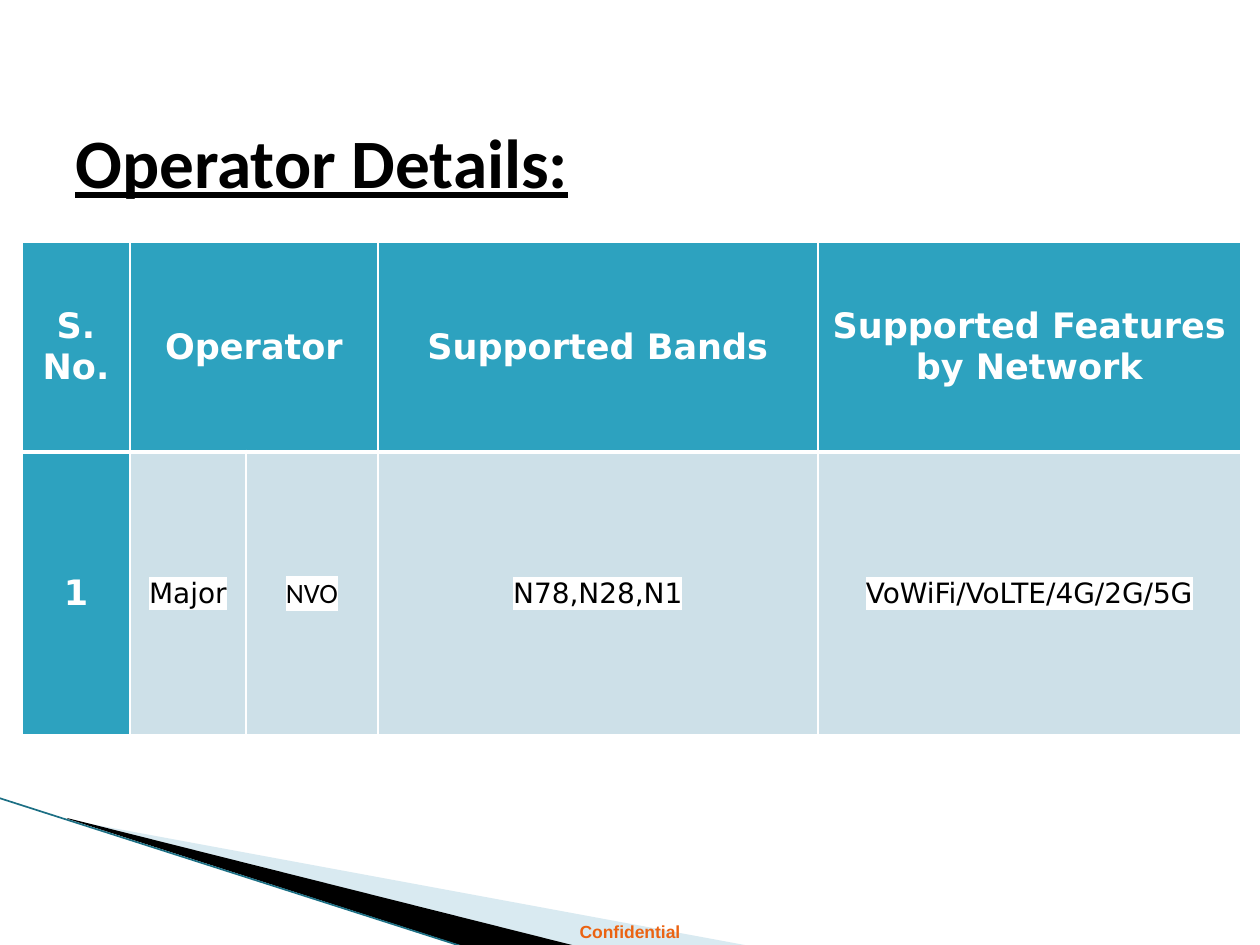
from lxml import etree
from pptx import Presentation
from pptx import util as u
from pptx.dml.color import RGBColor
from pptx.enum import shapes, text
from pptx.oxml.ns import qn

EMU_PER_PX = 914400 / 126
SLIDE = (1260, 945)
BLACK, WHITE, TEAL, PALE = "000000", "FFFFFF", "2DA2BF", "CDE0E8"

TITLE = "Operator Details:"
FOOTER = "Confidential"
HEADINGS = ["S. No.", "Operator", "", "Supported Bands", "Supported Features by Network"]
OPERATOR = ["1", "Major", "NVO", "N78,N28,N1", "VoWiFi/VoLTE/4G/2G/5G"]
NAME_COLUMN = 2
COLUMNS = [108, 116, 132, 440, 423]
ROWS = [210, 283]
TABLE_CORNER = (22, 242)

# Outline points, fill, opacity in percent
WEDGES = [
    ([(69, 820), (750, 946), (575, 946), (69, 819)], "A0CBDC", 40),
    ([(67, 818), (576, 946), (469, 948), (68, 819)], BLACK, 100),
]
EDGE = (-1, 798, 467, 948)


def px(length):
    return u.Emu(round(length * EMU_PER_PX))


def rgb(colour):
    return RGBColor.from_string(colour)


def add_run(paragraph, wording, size, face, colour, bold=False, underline=False, highlight=None):
    run = paragraph.add_run()
    run.text = wording
    font = run.font
    font.size, font.name, font.bold = u.Pt(size), face, bold
    font.color.rgb = rgb(colour)
    if underline:
        font.underline = True
    if highlight:
        mark = etree.Element(qn("a:highlight"))
        etree.SubElement(mark, qn("a:srgbClr"), val=highlight)
        run._r.rPr.find(qn("a:solidFill")).addnext(mark)


def add_text(slide, box, wording, align, anchor, *style):
    frame = slide.shapes.add_textbox(*map(px, box)).text_frame
    frame.word_wrap = True
    frame.vertical_anchor = anchor
    frame.paragraphs[0].alignment = align
    add_run(frame.paragraphs[0], wording, *style)


def add_wedge(slide, points, colour, opacity):
    builder = slide.shapes.build_freeform(*points[0], scale=EMU_PER_PX)
    builder.add_line_segments(points[1:], close=True)
    wedge = builder.convert_to_shape()
    wedge.shadow.inherit = False
    wedge.line.fill.background()
    wedge.fill.solid()
    wedge.fill.fore_color.rgb = rgb(colour)
    if opacity < 100:
        fill_colour = wedge._element.spPr.find(qn("a:solidFill"))[0]
        etree.SubElement(fill_colour, qn("a:alpha"), val=str(opacity * 1000))


def add_edge(slide):
    edge = slide.shapes.add_connector(shapes.MSO_CONNECTOR.STRAIGHT, *map(px, EDGE))
    edge.line.color.rgb = rgb("1C6F84")
    edge.line.width = u.Pt(0.95)
    etree.SubElement(edge._element.spPr, qn("a:effectLst"))


def set_borders(cell, widths):
    """Draw white borders; widths maps a side (L, R, T, B) to points."""
    properties = cell._tc.get_or_add_tcPr()
    for position, (side, width) in enumerate(widths.items()):
        border = etree.Element(qn(f"a:ln{side}"), w=str(u.Pt(width)))
        fill = etree.SubElement(border, qn("a:solidFill"))
        etree.SubElement(fill, qn("a:srgbClr"), val=WHITE)
        properties.insert(position, border)


def add_operator_table(slide):
    size = (px(sum(COLUMNS)), px(sum(ROWS)))
    table = slide.shapes.add_table(
        len(ROWS), len(COLUMNS), *map(px, TABLE_CORNER), *size).table
    for column, width in zip(table.columns, COLUMNS):
        column.width = px(width)
    for row, height in zip(table.rows, ROWS):
        row.height = px(height)
    table.cell(0, 1).merge(table.cell(0, 2))

    for r, wordings in enumerate([HEADINGS, OPERATOR]):
        for c, wording in enumerate(wordings):
            cell = table.cell(r, c)
            heading = r == 0 or c == 0
            cell.fill.solid()
            cell.fill.fore_color.rgb = rgb(TEAL if heading else PALE)
            set_borders(cell, {"L": 1, "R": 1, "T": 3 if r else 1, "B": 1 if r else 3})
            cell.margin_left = cell.margin_right = cell.margin_top = cell.margin_bottom = 0
            cell.vertical_anchor = text.MSO_ANCHOR.MIDDLE
            if not wording:
                continue
            paragraph = cell.text_frame.paragraphs[0]
            paragraph.alignment = text.PP_ALIGN.CENTER
            if heading:
                add_run(paragraph, wording, 20, "DejaVu Sans", WHITE, True, highlight=TEAL)
            else:
                face = "Calibri" if c == NAME_COLUMN else "DejaVu Sans"
                add_run(paragraph, wording, 16, face, BLACK, highlight=WHITE)


def main():
    deck = Presentation()
    deck.slide_width, deck.slide_height = map(px, SLIDE)
    slide = deck.slides.add_slide(deck.slide_layouts[6])
    for wedge in WEDGES:
        add_wedge(slide, *wedge)
    add_edge(slide)
    add_text(slide, (0, 915, 1260, 34), FOOTER, text.PP_ALIGN.CENTER,
             text.MSO_ANCHOR.TOP, 10, "Arial", "EB6312", True)
    add_operator_table(slide)
    add_text(slide, (63, 126, 1134, 69), TITLE, text.PP_ALIGN.LEFT,
             text.MSO_ANCHOR.MIDDLE, 39.6, "Calibri", BLACK, True, True)
    deck.save("out.pptx")


if __name__ == "__main__":
    main()
